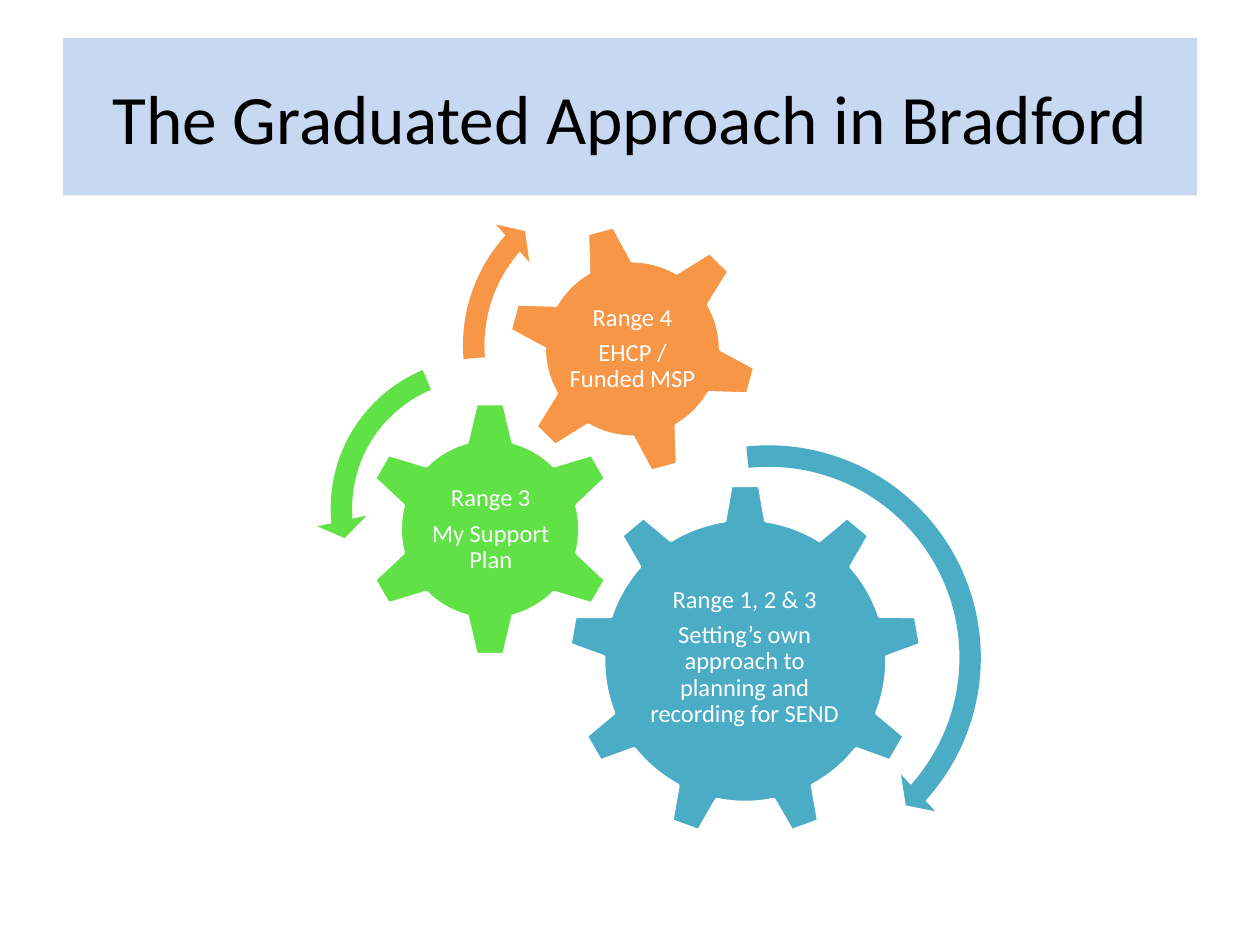
from dataclasses import dataclass

from pptx import Presentation
from pptx.dml.color import RGBColor
from pptx.enum.shapes import MSO_SHAPE as Preset
from pptx.enum.text import MSO_ANCHOR as Anchor, PP_ALIGN as Align
from pptx.util import Inches, Pt


@dataclass(frozen=True)
class Theme:
    font: str = "Calibri"
    title_size: float = 39.6
    label_size: float = 14
    ink: str = "000000"
    white: str = "FFFFFF"
    band: str = "C6D9F1"
    blue: str = "4BACC6"
    green: str = "60E146"
    orange: str = "F79646"


class SlideBuilder:
    """Draws the title, gears, labels and curved arrows of one slide in one theme."""

    def __init__(self, slide, theme):
        self.slide = slide
        self.theme = theme

    def shape(self, preset, area, fill, outline=None):
        shape = self.slide.shapes.add_shape(preset, *map(Inches, area))
        shape.shadow.inherit = False
        shape.fill.solid()
        shape.fill.fore_color.rgb = RGBColor.from_string(fill)
        if outline:
            shape.line.color.rgb = RGBColor.from_string(outline)
            shape.line.width = Pt(2)
        else:
            shape.line.fill.background()
        return shape

    def set_text(self, shape, text, size, color):
        frame = shape.text_frame
        frame.word_wrap = True
        frame.vertical_anchor = Anchor.MIDDLE
        frame.text = text
        for para in frame.paragraphs:
            para.alignment = Align.CENTER
            for span in para.runs:
                span.font.name = self.theme.font
                span.font.size = Pt(size)
                span.font.color.rgb = RGBColor.from_string(color)
        return frame

    def title(self, text, area):
        band = self.shape(Preset.RECTANGLE, area, self.theme.band)
        self.set_text(band, text, self.theme.title_size, self.theme.ink)

    def gear(self, preset, left, top, size, fill, rotation=0):
        gear = self.shape(preset, (left, top, size, size), fill, self.theme.white)
        gear.rotation = rotation

    def label(self, text, area):
        box = self.slide.shapes.add_textbox(*map(Inches, area))
        frame = self.set_text(box, text, self.theme.label_size, self.theme.white)
        frame.margin_left = frame.margin_right = Inches(0.02)
        frame.margin_top = frame.margin_bottom = Inches(0.02)
        for para in frame.paragraphs:
            para.line_spacing = 0.9
            para.space_after = Pt(0.35 * self.theme.label_size)

    def curved_arrow(self, preset, left, top, size, fill, angles):
        arrow = self.shape(preset, (left, top, size, size), fill)
        thickness, head = 0.17 / size, 0.2 / size
        values = (thickness, *(0.6 * angle for angle in angles), head)
        for index, value in enumerate(values):
            arrow.adjustments[index] = value


def main():
    deck = Presentation()
    deck.slide_width, deck.slide_height = Inches(10), Inches(7.5)
    theme = Theme()
    page = SlideBuilder(deck.slides.add_slide(deck.slide_layouts[6]), theme)

    page.title("The Graduated Approach in Bradford", (0.5, 0.3, 9, 1.25))

    page.gear(Preset.GEAR_9, 4.51, 3.84, 2.81, theme.blue)
    page.label(
        "Range 1, 2 & 3\nSetting’s own approach to planning and recording for SEND",
        (5.07, 4.5, 1.68, 1.44),
    )
    page.gear(Preset.GEAR_6, 2.87, 3.18, 2.04, theme.green)
    page.label("Range 3\nMy Support Plan", (3.39, 3.7, 1.01, 1.01))
    page.gear(Preset.GEAR_6, 4.02, 1.77, 2, theme.orange, rotation=345)
    page.label("Range 4\nEHCP / Funded MSP", (4.46, 2.21, 1.12, 1.12))

    clockwise, anticlockwise = Preset.CIRCULAR_ARROW, Preset.LEFT_CIRCULAR_ARROW
    page.curved_arrow(clockwise, 4.3, 3.42, 3.6, theme.blue, (4.98, 42.11, 263.99))
    page.curved_arrow(anticlockwise, 2.51, 2.73, 2.61, theme.green, (7.17, 174.82, 247.3))
    page.curved_arrow(clockwise, 3.56, 1.33, 2.82, theme.orange, (6.57, 221.9, 175.14))

    deck.save("out.pptx")


if __name__ == "__main__":
    main()
